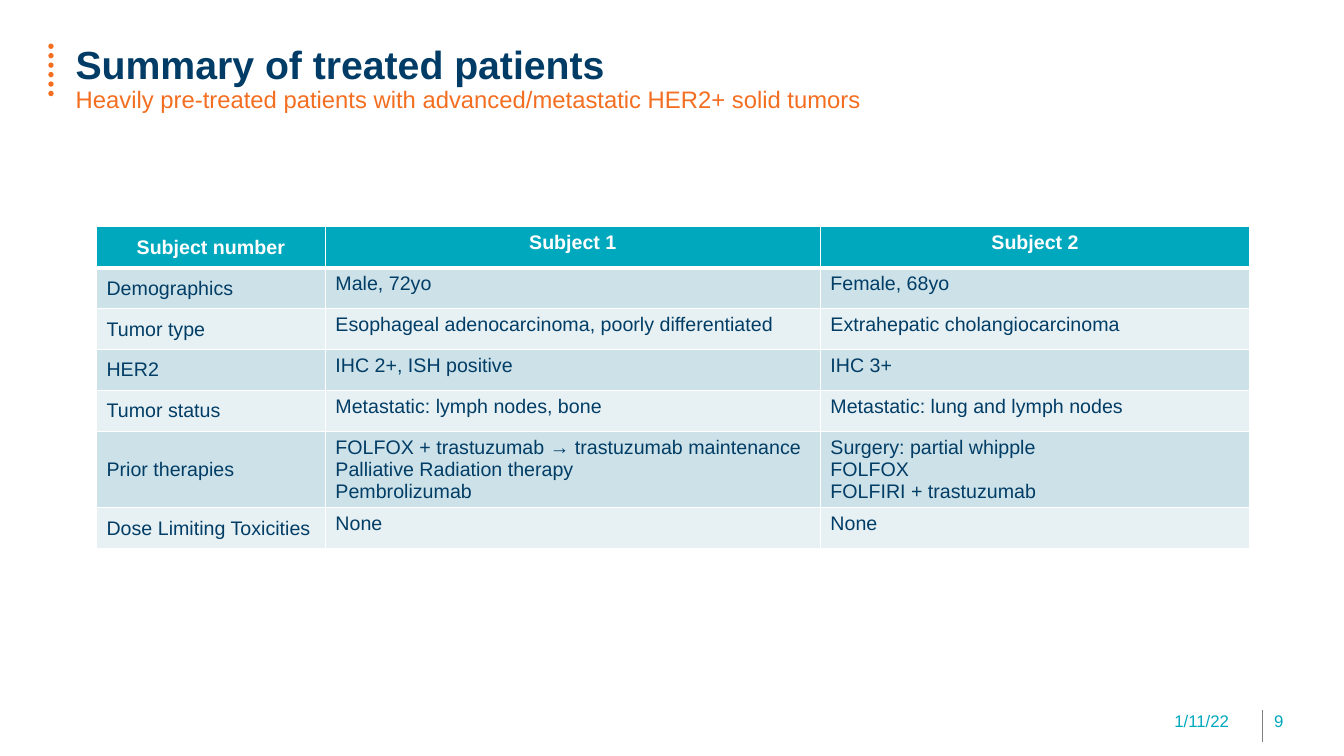
from lxml import etree
from pptx import Presentation
from pptx.dml.color import RGBColor
from pptx.enum.shapes import MSO_CONNECTOR, MSO_SHAPE
from pptx.enum.text import MSO_ANCHOR, MSO_AUTO_SIZE, PP_ALIGN
from pptx.oxml import parse_xml
from pptx.oxml.ns import nsdecls, qn
from pptx.util import Inches, Pt

NAVY, TEAL, ORANGE, WHITE, GREY = "023D66", "00A8BD", "F36E20", "FFFFFF", "808080"
BANDS = ["E7F1F4", "CCE1E8"]

prs = Presentation()
prs.slide_width, prs.slide_height = Inches(13.33), Inches(7.5)
s = prs.slides.add_slide(prs.slide_layouts[5])


def share(x, y, w, h):
    """Turn percentages of the slide's width and height into lengths."""
    W, H = prs.slide_width, prs.slide_height
    return [int(v * side / 100) for v, side in ((x, W), (y, H), (w, W), (h, H))]


def style(p, size, color, bold=False, align=PP_ALIGN.LEFT):
    p.alignment = align
    for r in p.runs:
        r.font.name, r.font.size, r.font.bold = "Arial", Pt(size), bold
        r.font.color.rgb = RGBColor.from_string(color)


# Title with subtitle
title = s.shapes.title
title.left, title.top, title.width, title.height = share(4.88, 5.33, 89.2, 14.53)
tf = title.text_frame
tf.text = ("Summary of treated patients\n"
           "Heavily pre-treated patients with advanced/metastatic HER2+ solid tumors")
tf.vertical_anchor = MSO_ANCHOR.TOP
tf.auto_size = MSO_AUTO_SIZE.NONE
style(tf.paragraphs[0], 28, "013C67", bold=True)
style(tf.paragraphs[1], 17, ORANGE)
for p in tf.paragraphs:
    p.line_spacing = 0.9

# Column of dots beside the title
for i in range(6):
    dot = s.shapes.add_shape(MSO_SHAPE.OVAL, *share(3.6, 5.77 + 1.25 * i, 0.39, 0.7))
    dot.shadow.inherit = False
    dot.fill.solid()
    dot.fill.fore_color.rgb = RGBColor.from_string(ORANGE)
    dot.line.fill.background()

# Patient table
rows = [
    ("Subject number", "Subject 1", "Subject 2"),
    ("Demographics", "Male, 72yo", "Female, 68yo"),
    ("Tumor type", "Esophageal adenocarcinoma, poorly differentiated",
     "Extrahepatic cholangiocarcinoma"),
    ("HER2", "IHC 2+, ISH positive", "IHC 3+"),
    ("Tumor status", "Metastatic: lymph nodes, bone", "Metastatic: lung and lymph nodes"),
    ("Prior therapies",
     "FOLFOX + trastuzumab → trastuzumab maintenance\n"
     "Palliative Radiation therapy\nPembrolizumab",
     "Surgery: partial whipple\nFOLFOX\nFOLFIRI + trastuzumab"),
    ("Dose Limiting Toxicities", "None", "None"),
]
col_shares = [17.03, 36.83, 31.96]
row_shares = [10.04 if "\n" in row[1] else 5.42 for row in rows]
frame = s.shapes.add_table(len(rows), len(col_shares),
                           *share(7.18, 30, sum(col_shares), sum(row_shares)))
table = frame.table
for col, w in zip(table.columns, col_shares):
    col.width = share(0, 0, w, 0)[2]
for row, h in zip(table.rows, row_shares):
    row.height = share(0, 0, 0, h)[3]

for i, row in enumerate(rows):
    for j, text in enumerate(row):
        cell = table.cell(i, j)
        cell.text_frame.text = text
        cell.vertical_anchor = MSO_ANCHOR.MIDDLE if j == 0 else MSO_ANCHOR.TOP
        for p in cell.text_frame.paragraphs:
            if i == 0:
                style(p, 14, WHITE, bold=True, align=PP_ALIGN.CENTER)
            else:
                style(p, 14, NAVY)
        # White borders, thick under the header
        thick = {0: "lnB", 1: "lnT"}.get(i)
        for side in ("lnL", "lnR", "lnT", "lnB"):
            width = Pt(3 if side == thick else 1)
            cell._tc.get_or_add_tcPr().append(parse_xml(
                f'<a:{side} {nsdecls("a")} w="{width}"><a:solidFill>'
                f'<a:srgbClr val="{WHITE}"/></a:solidFill></a:{side}>'))
        cell.fill.solid()
        cell.fill.fore_color.rgb = RGBColor.from_string(BANDS[i % 2] if i else TEAL)

# Footer: date, divider, slide number
for text, x, w, align in [("1/11/22", 69.69, 22.5, PP_ALIGN.RIGHT),
                          ("9", 94.07, 3.9, PP_ALIGN.LEFT)]:
    tf = s.shapes.add_textbox(*share(x, 92.67, w, 5.33)).text_frame
    tf.word_wrap = True
    tf.vertical_anchor = MSO_ANCHOR.MIDDLE
    tf.text = text
    style(tf.paragraphs[0], 12, TEAL, align=align)

x, top, _, bottom = share(93.9, 93.97, 0, 98.2)
divider = s.shapes.add_connector(MSO_CONNECTOR.STRAIGHT, x, top, x, bottom)
divider.line.width = Pt(0.5)
divider.line.color.rgb = RGBColor.from_string(GREY)
etree.SubElement(divider._element.spPr, qn("a:effectLst"))

prs.save("out.pptx")
